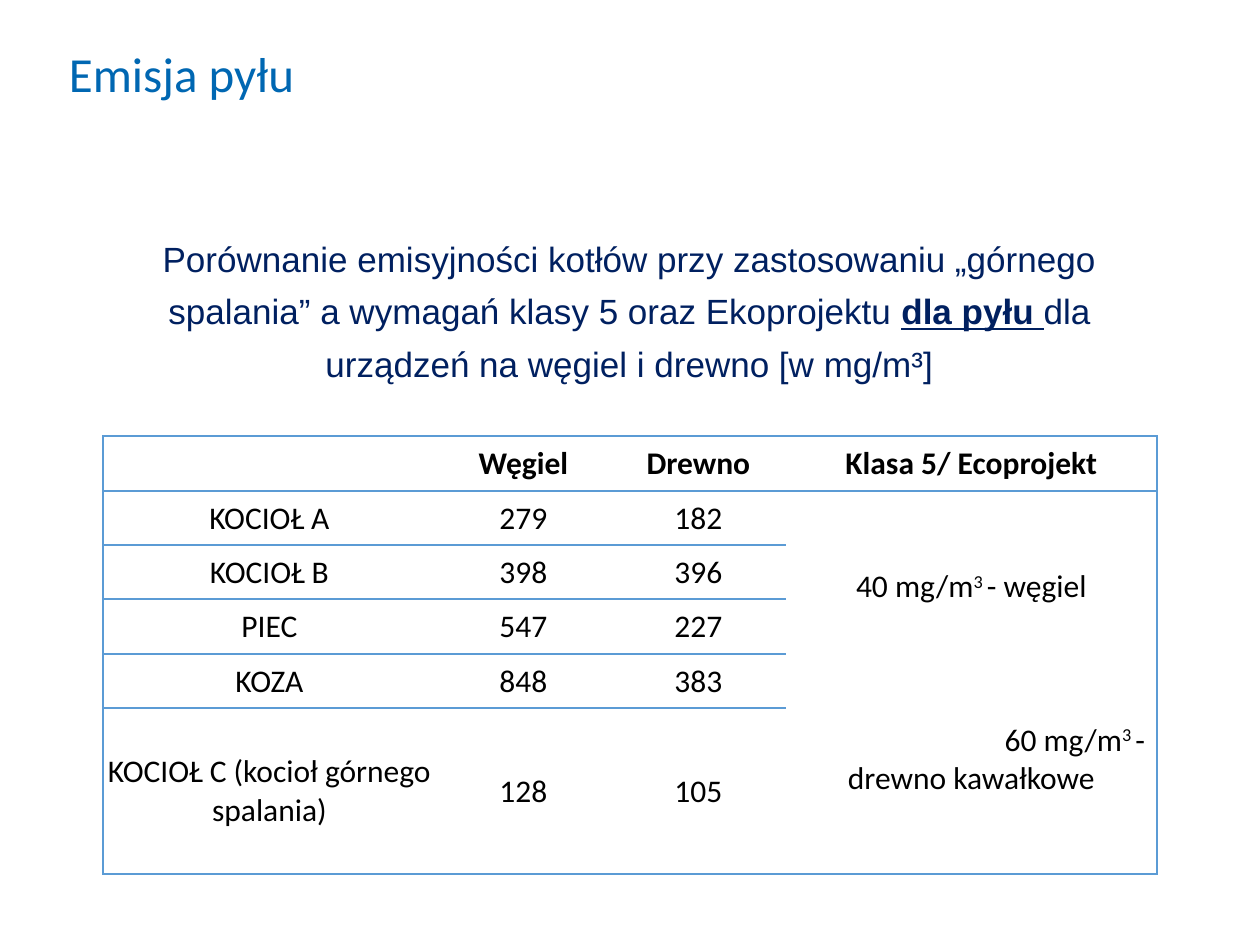
from dataclasses import dataclass

from lxml.etree import SubElement
from pptx import Presentation
from pptx.dml.color import RGBColor
from pptx.enum.text import MSO_ANCHOR as Anchor, PP_ALIGN as Align
from pptx.oxml.ns import qn
from pptx.util import Pt

PX = 914400 / 126
BLUE, NAVY, BLACK, WHITE, EDGE = "0067B2", "002060", "000000", "FFFFFF", "5B9BD5"
COLS = [333, 175, 175, 371]
ROWS = [55, 54, 54, 55, 54, 166]
DATA = [
    ("", "Węgiel", "Drewno", "Klasa 5/ Ecoprojekt"),
    ("KOCIOŁ A", "279", "182"),
    ("KOCIOŁ B", "398", "396"),
    ("PIEC", "547", "227"),
    ("KOZA", "848", "383"),
    ("KOCIOŁ C (kocioł górnego spalania)", "128", "105"),
]


@dataclass
class Style:
    font: str
    size: int
    tint: str


@dataclass
class Piece:
    text: str
    strong: bool = False
    under: bool = False
    sup: bool = False


TITLE = Style("Calibri", 28, BLUE)
LEAD = Style("Arial", 20, NAVY)
CELL = Style("Calibri", 18, BLACK)
LIMITS = [
    [Piece("40 mg/m"), Piece("3 ", sup=True), Piece("- węgiel")],
    [Piece("60 mg/m"), Piece("3 ", sup=True), Piece("- drewno kawałkowe")],
]


def emu(px: int) -> int:
    return round(px * PX)


def color(code: str) -> RGBColor:
    return RGBColor.from_string(code)


def write(para, pieces: list[Piece], style: Style, align=Align.CENTER) -> None:
    para.alignment = align
    for piece in pieces:
        run = para.add_run()
        run.text = piece.text
        font = run.font
        font.name, font.size = style.font, Pt(style.size)
        font.bold, font.underline = piece.strong, piece.under
        font.color.rgb = color(style.tint)
        if piece.sup:
            run._r.get_or_add_rPr().set("baseline", "30000")


def add_text(slide, box: tuple, pieces: list[Piece], style: Style, align, pitch):
    frame = slide.shapes.add_textbox(*map(emu, box)).text_frame
    frame.word_wrap = True
    frame.margin_left = frame.margin_right = 0
    frame.margin_top = frame.margin_bottom = 0
    para = frame.paragraphs[0]
    para.line_spacing = pitch
    write(para, pieces, style, align)


def dress(cell, sides: str) -> None:
    """Set margins, fill and the borders named by L, R, T and B."""
    cell.margin_left = cell.margin_right = cell.margin_top = emu(1)
    cell.margin_bottom = 0
    cell.vertical_anchor = Anchor.MIDDLE
    props = cell._tc.get_or_add_tcPr()
    for side in "LRTB":
        line = SubElement(props, qn(f"a:ln{side}"), w=str(Pt(1)))
        if side in sides:
            fill = SubElement(line, qn("a:solidFill"))
            SubElement(fill, qn("a:srgbClr"), val=EDGE)
        else:
            SubElement(line, qn("a:noFill"))
    cell.fill.solid()
    cell.fill.fore_color.rgb = color(WHITE)


def add_limits(cell) -> None:
    frame = cell.text_frame
    write(frame.paragraphs[0], LIMITS[0], CELL)
    wood = frame.add_paragraph()
    wood.space_before = Pt(66)
    # The first-line indent leaves room for the value alone beside the edge.
    wood._p.get_or_add_pPr().set("indent", str(emu(207)))
    write(wood, LIMITS[1], CELL)


def add_grid(slide) -> None:
    box = map(emu, (103, 436, sum(COLS), sum(ROWS)))
    table = slide.shapes.add_table(len(ROWS), len(COLS), *box).table
    table.first_row = table.horz_banding = False
    for col, width in zip(table.columns, COLS):
        col.width = emu(width)
    for row, height in zip(table.rows, ROWS):
        row.height = emu(height)
    last = len(COLS) - 1
    for r in range(len(ROWS)):
        for c in range(len(COLS)):
            sides = "L" if c == 0 else "R" if c == last else ""
            if c < last or r < 2:
                sides += "T"
            if c < last or r in (0, 1, len(ROWS) - 1):
                sides += "B"
            dress(table.cell(r, c), sides)
    for r, texts in enumerate(DATA):
        for c, text in enumerate(texts):
            if text:
                para = table.cell(r, c).text_frame.paragraphs[0]
                write(para, [Piece(text, strong=r == 0)], CELL)
    limit = table.cell(1, last)
    limit.merge(table.cell(len(ROWS) - 1, last))
    add_limits(limit)


def main() -> None:
    deck = Presentation()
    deck.slide_width, deck.slide_height = emu(1260), emu(945)
    slide = deck.slides.add_slide(deck.slide_layouts[6])
    lead = [
        Piece("Porównanie emisyjności kotłów przy zastosowaniu „górnego "
              "spalania” a wymagań klasy 5 oraz Ekoprojektu "),
        Piece("dla pyłu ", strong=True, under=True),
        Piece("dla urządzeń na węgiel i drewno [w mg/m³]"),
    ]
    add_text(slide, (120, 227, 1019, 176), lead, LEAD, Align.CENTER, Pt(30))
    add_text(slide, (69, 50, 329, 59), [Piece("Emisja pyłu")], TITLE, Align.LEFT, 0.9)
    add_grid(slide)
    deck.save("out.pptx")


if __name__ == "__main__":
    main()
